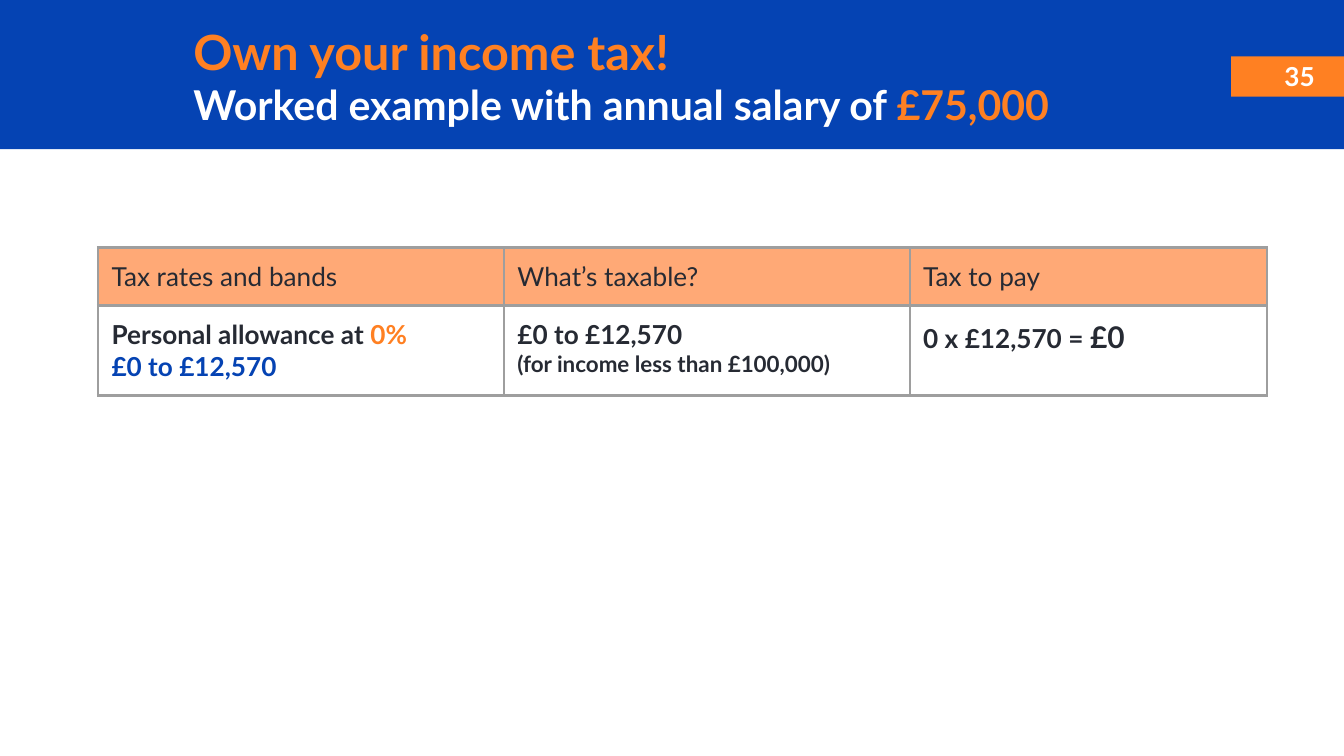
from lxml import etree
from pptx import Presentation
from pptx.dml.color import RGBColor as RGB
from pptx.enum.shapes import MSO_SHAPE as Shape
from pptx.enum.text import MSO_ANCHOR as Anchor, PP_ALIGN as Align
from pptx.oxml.ns import qn
from pptx.util import Inches, Pt

COLORS = {
    "blue": "0543B3",
    "orange": "FF8022",
    "peach": "FFA976",
    "ink": "262A33",
    "white": "FFFFFF",
    "grey": "9E9E9E",
}
FONT = "Lato"
INSET = 0.1

TITLE = [
    [("Own your income tax!", 26, "orange")],
    [("Worked example with annual salary of ", 22, "white"), ("£75,000", 22, "orange")],
]
PAGE_NUMBER = [[("35", 14, "white")]]
HEADINGS = ["Tax rates and bands", "What’s taxable?", "Tax to pay"]
ALLOWANCE = [
    [
        [("Personal allowance at ", 14, "ink"), ("0%", 14, "orange")],
        [("£0 to £12,570", 14, "blue")],
    ],
    [
        [("£0 to £12,570", 14, "ink")],
        [("(for income less than £100,000)", 12, "ink")],
    ],
    [[("0 x £12,570 = ", 14, "ink"), ("£0", 16, "ink")]],
]
TAX_ROWS = [[[[(heading, 14, "ink")]] for heading in HEADINGS], ALLOWANCE]
COLUMN_WIDTHS = [3.02, 3.02, 2.66]
ROW_HEIGHTS = [0.43, 0.66]


def color(name):
    return RGB.from_string(COLORS[name])


def write(frame, paragraphs, bold=True, align=Align.LEFT):
    for index, runs in enumerate(paragraphs):
        paragraph = frame.add_paragraph() if index else frame.paragraphs[0]
        paragraph.alignment = align
        paragraph.font.name = FONT
        paragraph.font.bold = bold
        sizes = {size for _, size, _ in runs}
        shades = {shade for _, _, shade in runs}
        if len(sizes) == 1:
            paragraph.font.size = Pt(runs[0][1])
        if len(shades) == 1:
            paragraph.font.color.rgb = color(runs[0][2])
        for text, size, shade in runs:
            run = paragraph.add_run()
            run.text = text
            if len(sizes) > 1:
                run.font.size = Pt(size)
            if len(shades) > 1:
                run.font.color.rgb = color(shade)


def set_insets(holder):
    holder.margin_left = holder.margin_right = Inches(INSET)
    holder.margin_top = holder.margin_bottom = Inches(INSET)


def add_block(slide, box, fill):
    block = slide.shapes.add_shape(Shape.RECTANGLE, *map(Inches, box))
    block.shadow.inherit = False
    block.fill.solid()
    block.fill.fore_color.rgb = color(fill)
    block.line.fill.background()


def add_text(slide, box, paragraphs, align=Align.LEFT):
    frame = slide.shapes.add_textbox(*map(Inches, box)).text_frame
    frame.word_wrap = True
    frame.vertical_anchor = Anchor.MIDDLE
    set_insets(frame)
    write(frame, paragraphs, align=align)


def add_borders(cell):
    properties = cell._tc.get_or_add_tcPr()
    for position, side in enumerate(("a:lnL", "a:lnR", "a:lnT", "a:lnB")):
        border = etree.Element(qn(side), w=str(Pt(1.5)))
        fill = etree.SubElement(border, qn("a:solidFill"))
        etree.SubElement(fill, qn("a:srgbClr"), val=COLORS["grey"])
        properties.insert(position, border)


def add_tax_table(slide, left, top):
    table = slide.shapes.add_table(
        len(TAX_ROWS), len(COLUMN_WIDTHS), Inches(left), Inches(top),
        Inches(sum(COLUMN_WIDTHS)), Inches(sum(ROW_HEIGHTS)),
    ).table
    table.horz_banding = False
    for column, width in zip(table.columns, COLUMN_WIDTHS):
        column.width = Inches(width)
    for row, height in zip(table.rows, ROW_HEIGHTS):
        row.height = Inches(height)
    for r, entries in enumerate(TAX_ROWS):
        for c, paragraphs in enumerate(entries):
            cell = table.cell(r, c)
            set_insets(cell)
            cell.fill.solid()
            cell.fill.fore_color.rgb = color("white" if r else "peach")
            add_borders(cell)
            write(cell.text_frame, paragraphs, bold=r > 0)


def main():
    deck = Presentation()
    deck.slide_width = Inches(10)
    deck.slide_height = deck.slide_width * 9 // 16
    slide = deck.slides.add_slide(deck.slide_layouts[6])
    add_block(slide, (0, 0, 10, 1.11), "blue")
    add_block(slide, (9.16, 0.42, 0.84, 0.3), "orange")
    add_text(slide, (9.41, 0.44, 0.52, 0.25), PAGE_NUMBER, Align.CENTER)
    add_text(slide, (1.34, 0.28, 6.9, 0.56), TITLE)
    add_tax_table(slide, 0.73, 1.84)
    deck.save("out.pptx")


if __name__ == "__main__":
    main()
